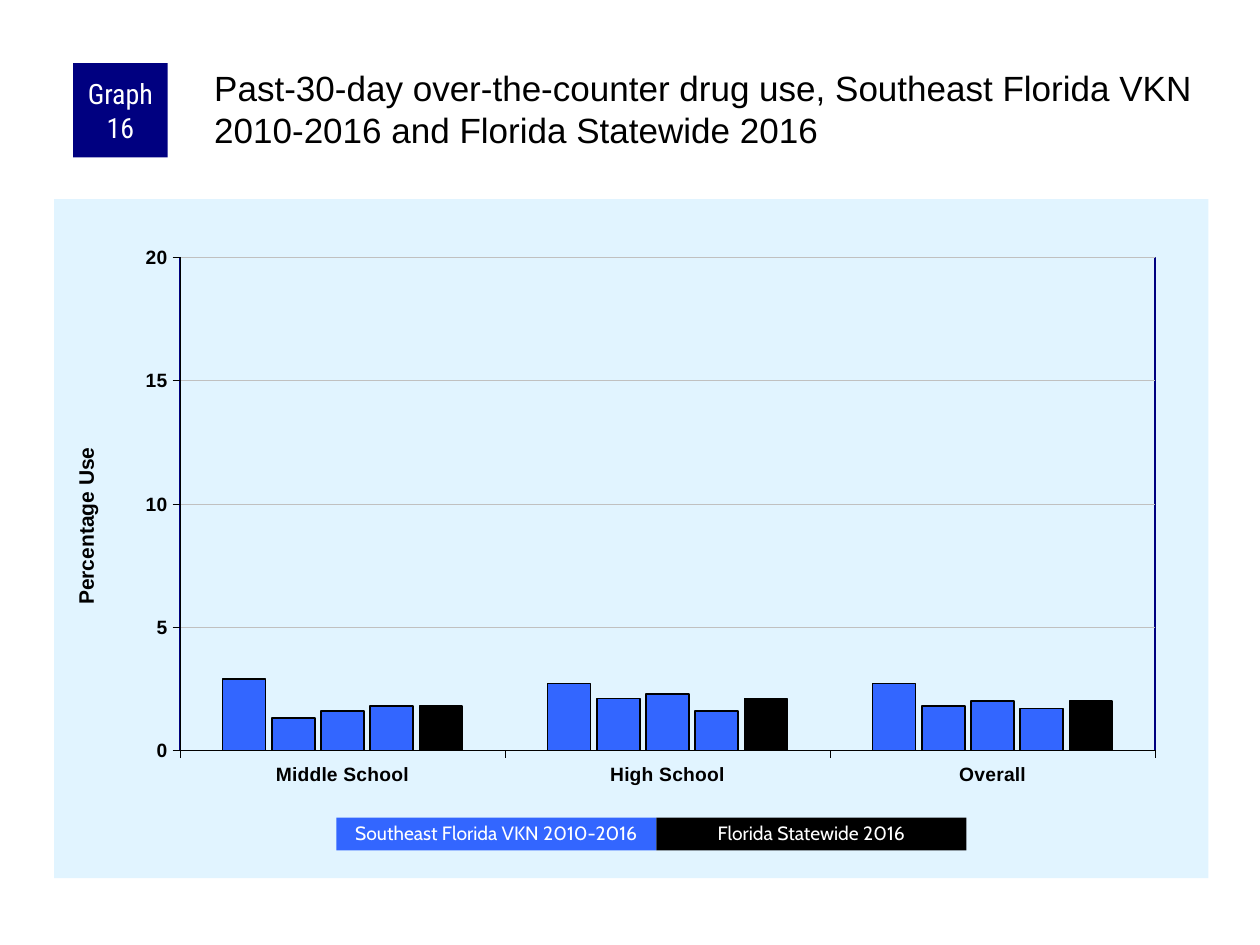
"""Build a slide with a clustered column chart of over-the-counter drug use."""
from lxml import etree
from pptx import Presentation
from pptx.chart.data import CategoryChartData
from pptx.dml.color import RGBColor
from pptx.enum.chart import XL_CHART_TYPE, XL_TICK_MARK
from pptx.enum.shapes import MSO_SHAPE
from pptx.enum.text import MSO_ANCHOR, PP_ALIGN
from pptx.oxml import parse_xml
from pptx.oxml.ns import qn
from pptx.util import Inches, Pt

COLUMN = XL_CHART_TYPE.COLUMN_CLUSTERED
OUTSIDE, NO_TICK = XL_TICK_MARK.OUTSIDE, XL_TICK_MARK.NONE
RECTANGLE = MSO_SHAPE.RECTANGLE
MIDDLE, TOP = MSO_ANCHOR.MIDDLE, MSO_ANCHOR.TOP
CENTER, LEFT = PP_ALIGN.CENTER, PP_ALIGN.LEFT
BLACK = RGBColor(0x00, 0x00, 0x00)
WHITE = RGBColor(0xFF, 0xFF, 0xFF)
NAVY = RGBColor(0x00, 0x00, 0x80)
BLUE = RGBColor(0x33, 0x66, 0xFF)
PALE_BLUE = RGBColor(0xE1, 0xF4, 0xFF)
GRAY = RGBColor(0xC0, 0xC0, 0xC0)

TITLE = ("Past-30-day over-the-counter drug use, Southeast Florida VKN "
         "2010-2016 and Florida Statewide 2016")
BADGE = "Graph 16"
AXIS_TITLE = "Percentage Use"
CATEGORIES = ["Middle School", "High School", "Overall"]
SERIES = [
    ("Series 1", (2.9, 2.7, 2.7), BLUE, 0.75),
    ("Series 2", (1.3, 2.1, 1.8), BLUE, 1),
    ("Series 3", (1.6, 2.3, 2.0), BLUE, 1),
    ("Series 4", (1.8, 1.6, 1.7), BLUE, 1),
    ("Series 5", (1.8, 2.1, 2.0), BLACK, 1),
]
LEGEND = [("Southeast Florida VKN 2010-2016", BLUE, 2.54),
          ("Florida Statewide 2016", BLACK, 2.46)]
LEGEND_LEFT, LEGEND_TOP, LEGEND_HEIGHT = 2.67, 6.49, 0.26
CHART_BOX = (0.43, 1.58, 9.16, 5.39)
PLOT_LAYOUT = {"x": 0.109, "y": 0.086, "w": 0.845, "h": 0.726}
AXIS_TITLE_LAYOUT = {"x": 0.013, "y": 0.36}
CHART_NS = "http://schemas.openxmlformats.org/drawingml/2006/chart"
DRAWING_NS = "http://schemas.openxmlformats.org/drawingml/2006/main"


def apply(target, **values):
    for name, value in values.items():
        setattr(target, name, value)


def set_font(font, name, size, color, bold=False):
    apply(font, name=name, size=Pt(size), bold=bold)
    font.color.rgb = color


def set_line(line, color, width):
    line.color.rgb = color
    line.width = Pt(width)


def set_layout(element, index, sizes, target=None):
    for old in element.findall(qn("c:layout")):
        element.remove(old)
    layout = etree.Element(qn("c:layout"))
    manual = etree.SubElement(layout, qn("c:manualLayout"))
    settings = {"layoutTarget": target} if target else {}
    settings |= {"xMode": "edge", "yMode": "edge"} | sizes
    for tag, value in settings.items():
        etree.SubElement(manual, qn(f"c:{tag}")).set("val", str(value))
    element.insert(index, layout)


def area_format(content):
    return parse_xml(f'<c:spPr xmlns:c="{CHART_NS}" xmlns:a="{DRAWING_NS}">'
                     f'{content}</c:spPr>')


def solid(color):
    return f'<a:solidFill><a:srgbClr val="{color}"/></a:solidFill>'


def write(shape, text, font, size, color, align=CENTER, anchor=MIDDLE,
          margins=None, spacing=None):
    frame = shape.text_frame
    apply(frame, word_wrap=True, vertical_anchor=anchor)
    if margins:
        sides = ("margin_left", "margin_top", "margin_right", "margin_bottom")
        apply(frame, **dict(zip(sides, map(Inches, margins))))
    paragraph = frame.paragraphs[0]
    apply(paragraph, alignment=align, line_spacing=spacing)
    run = paragraph.add_run()
    run.text = text
    set_font(run.font, font, size, color)


def add_block(slide, box, fill):
    shape = slide.shapes.add_shape(RECTANGLE, *map(Inches, box))
    shape.shadow.inherit = False
    shape.fill.solid()
    shape.fill.fore_color.rgb = fill
    shape.line.fill.background()
    return shape


def add_use_chart(slide):
    data = CategoryChartData()
    data.categories = CATEGORIES
    for name, values, _, _ in SERIES:
        data.add_series(name, values)
    chart = slide.shapes.add_chart(COLUMN, *map(Inches, CHART_BOX), data).chart
    apply(chart, has_legend=False, has_title=False)
    set_font(chart.font, "Arial", 8, BLACK)

    plot = chart.plots[0]
    apply(plot, gap_width=200, overlap=-15, vary_by_categories=False)
    for series, (_, _, color, width) in zip(plot.series, SERIES):
        series.format.fill.solid()
        series.format.fill.fore_color.rgb = color
        set_line(series.format.line, BLACK, width)

    value_axis = chart.value_axis
    for axis in (chart.category_axis, value_axis):
        apply(axis, major_tick_mark=OUTSIDE, minor_tick_mark=NO_TICK)
        set_font(axis.tick_labels.font, "Arial", 11, BLACK, True)
        set_line(axis.format.line, BLACK, 0.25)
    apply(value_axis, minimum_scale=0, maximum_scale=20, major_unit=5,
          has_major_gridlines=True)
    set_line(value_axis.major_gridlines.format.line, GRAY, 0.25)
    value_axis.tick_labels.number_format = "0"
    value_axis.tick_labels.number_format_is_linked = False

    title = value_axis.axis_title
    run = title.text_frame.paragraphs[0].add_run()
    run.text = AXIS_TITLE
    set_font(run.font, "Arial", 12, BLACK, True)
    title.text_frame._txBody.bodyPr.set("rot", "-5400000")
    title.text_frame._txBody.bodyPr.set("vert", "horz")
    set_layout(title._element, 1, AXIS_TITLE_LAYOUT)

    chart_element = chart._chartSpace.find(qn("c:chart"))
    plot_area = chart_element.find(qn("c:plotArea"))
    set_layout(plot_area, 0, PLOT_LAYOUT, "inner")
    border = f'<a:ln w="{Pt(1)}">{solid(NAVY)}</a:ln>'
    plot_area.append(area_format("<a:noFill/>" + border))
    chart_element.addnext(
        area_format(solid(PALE_BLUE) + "<a:ln><a:noFill/></a:ln>"))


def main():
    presentation = Presentation()
    apply(presentation, slide_width=Inches(10), slide_height=Inches(7.5))
    slide = presentation.slides.add_slide(presentation.slide_layouts[6])
    add_use_chart(slide)

    badge = add_block(slide, (0.58, 0.5, 0.75, 0.75), NAVY)
    write(badge, BADGE, "Roboto Condensed", 16, WHITE,
          margins=(0.05, 0, 0.05, 0))
    heading = slide.shapes.add_textbox(*map(Inches, (1.67, 0.5, 7.92, 0.83)))
    write(heading, TITLE, "Arial", 20, BLACK, LEFT, TOP, (0.03, 0.03, 0, 0))

    left = LEGEND_LEFT
    for label, color, width in LEGEND:
        key = add_block(slide, (left, LEGEND_TOP, width, LEGEND_HEIGHT), color)
        write(key, label, "Cabin", 11, WHITE, spacing=0.9)
        left += width
    presentation.save("out.pptx")


if __name__ == "__main__":
    main()
